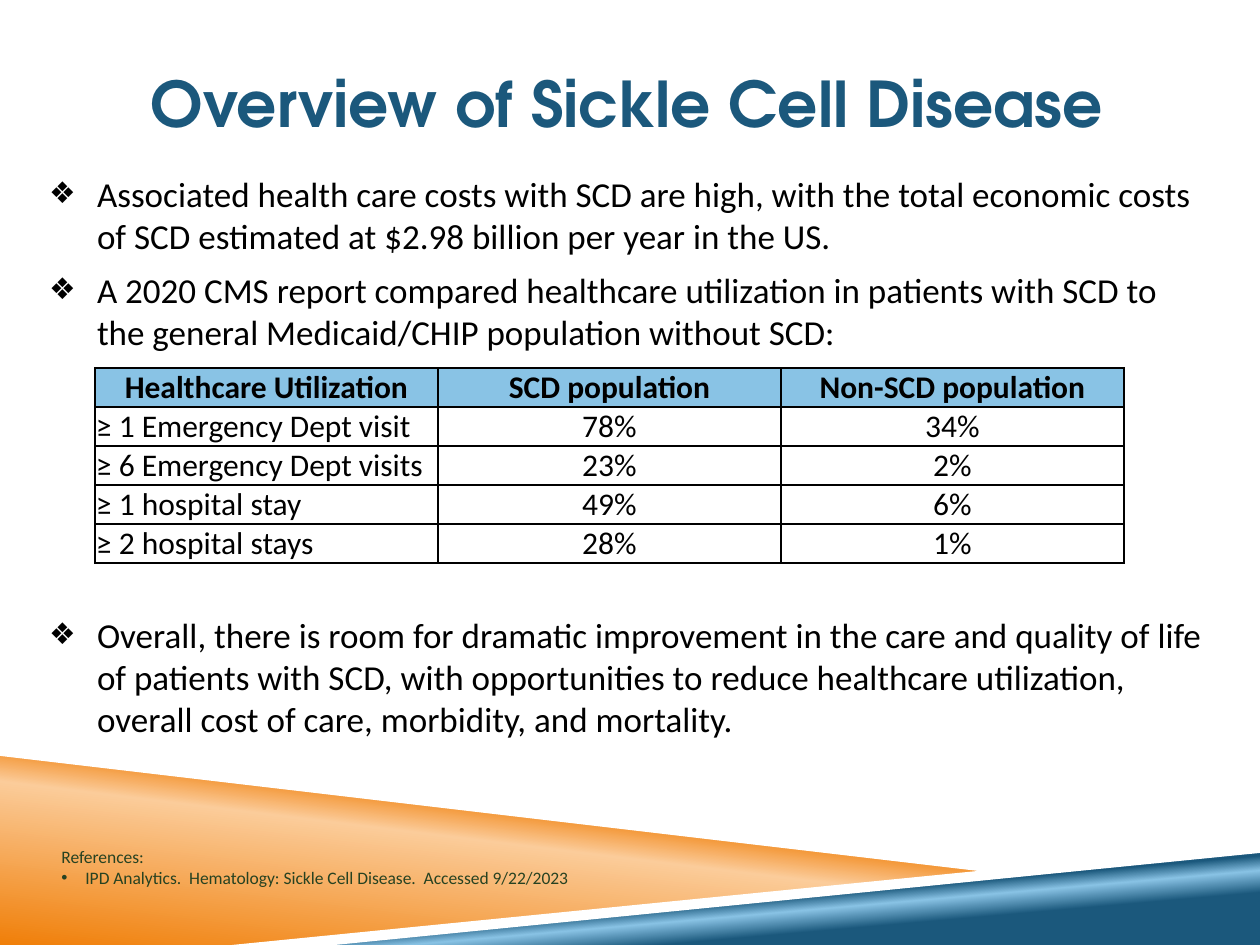
from copy import deepcopy

from lxml import etree
from pptx import Presentation
from pptx.dml.color import RGBColor
from pptx.enum.text import MSO_ANCHOR, MSO_AUTO_SIZE, PP_ALIGN
from pptx.oxml.ns import qn
from pptx.util import Pt

CENTER, LEFT = PP_ALIGN.CENTER, PP_ALIGN.LEFT
MIDDLE, BOTTOM = MSO_ANCHOR.MIDDLE, MSO_ANCHOR.BOTTOM
NO_AUTOFIT, GROW = MSO_AUTO_SIZE.NONE, MSO_AUTO_SIZE.SHAPE_TO_FIT_TEXT

PX = 914400 / 126
THEME = {
    "white": "FFFFFF", "black": "000000", "blue": "1B587C", "sky": "89C3E5",
    "orange": "F07F09", "peach": "FBCC9A", "green": "274221",
    "title_font": "TeX Gyre Adventor", "body_font": "Calibri",
    "title_size": 36, "body_size": 20, "table_size": 18, "reference_size": 10,
}


def px(*lengths):
    return [round(length * PX) for length in lengths]


def write_text(paragraph, text, size, color="black", font="body_font", bold=False,
               align=LEFT, before=0, bullet=None, bullet_size=100, indent=0):
    """Fill a paragraph; the bullet hangs in an indent given in px."""
    paragraph.alignment = align
    paragraph.space_before = Pt(before)
    if bullet:
        properties = paragraph._p.get_or_add_pPr()
        margin = px(indent)[0]
        properties.set("marL", str(margin))
        properties.set("indent", str(-margin))
        etree.SubElement(properties, qn("a:buSzPct"), val=str(bullet_size * 1000))
        etree.SubElement(properties, qn("a:buFont"), typeface="Arial")
        etree.SubElement(properties, qn("a:buChar"), char=bullet)
    run = paragraph.add_run()
    run.text = text
    run.font.name = THEME[font]
    run.font.size = Pt(THEME[size])
    run.font.bold = bold
    run.font.color.rgb = RGBColor.from_string(THEME[color])


presentation = Presentation()
presentation.slide_width, presentation.slide_height = px(1260, 945)
slide = presentation.slides.add_slide(presentation.slide_layouts[1])
title, body = slide.shapes.title, slide.placeholders[1]

# Footer wedges, behind the text: outline, gradient stops (percent, color), angle
wedges = [
    ([(0, 752), (998, 872), (252, 945), (0, 945)],
     [(0, "orange"), (52, "peach"), (66, "orange")], 277),
    ([(249, 945), (1260, 847), (1260, 945)],
     [(28, "blue"), (40, "sky"), (48, "blue")], 265),
    ([(0, 746), (0, 756), (995, 873), (1048, 869)], [(0, "white")], None),
    ([(1260, 843), (232, 945), (335, 945), (1260, 853)], [(0, "white")], None),
]
for points, stops, angle in wedges:
    builder = slide.shapes.build_freeform(*points[0], scale=PX)
    builder.add_line_segments(points[1:], close=True)
    wedge = builder.convert_to_shape()
    wedge.shadow.inherit = False
    wedge.line.fill.background()
    if angle is None:
        wedge.fill.solid()
        wedge.fill.fore_color.rgb = RGBColor.from_string(THEME[stops[0][1]])
    else:
        wedge.fill.gradient()
        wedge.fill.gradient_angle = 360 - angle
        stop_list = wedge.element.spPr.find(qn("a:gradFill")).find(qn("a:gsLst"))
        stop_list.append(deepcopy(stop_list[0]))
        for stop, (percent, color) in zip(wedge.fill.gradient_stops, stops):
            stop.position = percent / 100
            stop.color.rgb = RGBColor.from_string(THEME[color])
    title.element.addprevious(wedge.element)

# Title and body placeholders
for placeholder, box in ((title, (84, 42, 1086, 121)), (body, (49, 166, 1158, 601))):
    placeholder.left, placeholder.top, placeholder.width, placeholder.height = px(*box)
    frame = placeholder.text_frame
    frame.margin_left = frame.margin_right = 0
    frame.word_wrap = True
    frame.auto_size = NO_AUTOFIT
title.text_frame.vertical_anchor = MIDDLE
write_text(title.text_frame.paragraphs[0], "Overview of Sickle Cell Disease", "title_size",
           color="blue", font="title_font", bold=True, align=CENTER)

# The last bullet leaves room for the table
bullets = [
    ("Associated health care costs with SCD are high, with the total economic costs "
     "of SCD estimated at $2.98 billion per year in the US.", 0),
    ("A 2020 CMS report compared healthcare utilization in patients with SCD to "
     "the general Medicaid/CHIP population without SCD:", 7),
    ("Overall, there is room for dramatic improvement in the care and quality of life "
     "of patients with SCD, with opportunities to reduce healthcare utilization, "
     "overall cost of care, morbidity, and mortality.", 149),
]
frame = body.text_frame
for index, (text, before) in enumerate(bullets):
    paragraph = frame.add_paragraph() if index else frame.paragraphs[0]
    write_text(paragraph, text, "body_size", before=before, bullet="❖",
               bullet_size=85, indent=48)

# References
references = slide.shapes.add_textbox(*px(49, 840, 766, 55)).text_frame
references.word_wrap = True
references.auto_size = GROW
write_text(references.paragraphs[0], "References:", "reference_size", color="green")
write_text(references.add_paragraph(),
           "IPD Analytics.  Hematology: Sickle Cell Disease.  Accessed 9/22/2023",
           "reference_size", color="green", bullet="•", indent=24)

# Utilization table
rows = [
    ("Healthcare Utilization", "SCD population", "Non-SCD population"),
    ("≥ 1 Emergency Dept visit", "78%", "34%"),
    ("≥ 6 Emergency Dept visits", "23%", "2%"),
    ("≥ 1 hospital stay", "49%", "6%"),
    ("≥ 2 hospital stays", "28%", "1%"),
]
table = slide.shapes.add_table(len(rows), 3, *px(95, 368, 1029, 195)).table
for row_index, row in enumerate(rows):
    for column_index, text in enumerate(row):
        cell = table.cell(row_index, column_index)
        header, label = row_index == 0, row_index > 0 and column_index == 0
        cell.margin_left = cell.margin_right = cell.margin_top = px(1)[0]
        cell.margin_bottom = 0
        cell.vertical_anchor = BOTTOM if label else MIDDLE
        for side in ("a:lnL", "a:lnR", "a:lnT", "a:lnB"):
            border = etree.SubElement(cell._tc.get_or_add_tcPr(), qn(side), w=str(Pt(1)))
            fill = etree.SubElement(border, qn("a:solidFill"))
            etree.SubElement(fill, qn("a:srgbClr"), val=THEME["black"])
        if header:
            cell.fill.solid()
            cell.fill.fore_color.rgb = RGBColor.from_string(THEME["sky"])
        else:
            cell.fill.background()
        write_text(cell.text_frame.paragraphs[0], text, "table_size", bold=header,
                   align=LEFT if label else CENTER)

presentation.save("out.pptx")
